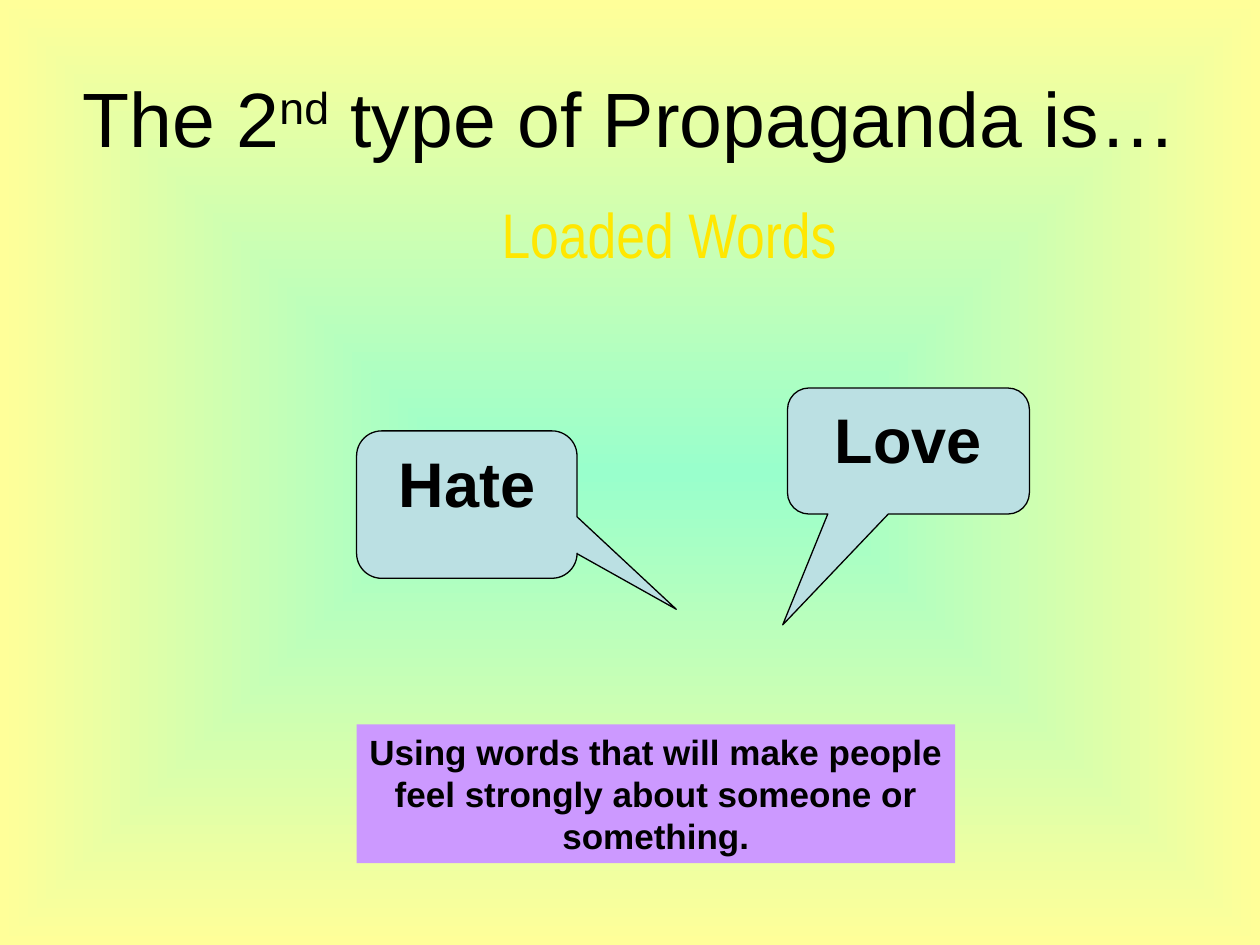
from lxml import etree
from pptx import Presentation
from pptx.dml.color import RGBColor
from pptx.enum.shapes import MSO_SHAPE
from pptx.enum.text import MSO_ANCHOR, PP_ALIGN
from pptx.oxml.ns import qn
from pptx.util import Inches, Pt

CALLOUT = MSO_SHAPE.ROUNDED_RECTANGULAR_CALLOUT
RECT = MSO_SHAPE.RECTANGLE
TOP, MIDDLE = MSO_ANCHOR.TOP, MSO_ANCHOR.MIDDLE
CENTER = PP_ALIGN.CENTER

BLACK = RGBColor(0x00, 0x00, 0x00)
MINT = RGBColor(0x99, 0xFF, 0xCC)
CREAM = RGBColor(0xFF, 0xFF, 0x99)
GOLD = RGBColor(0xFF, 0xE7, 0x01)
BLUE = RGBColor(0xBB, 0xE0, 0xE3)
PURPLE = RGBColor(0xCC, 0x99, 0xFF)


def write(shape, words, size, color=BLACK, face="Arial", bold=False, anchor=TOP):
    """Fill the shape with one centred paragraph and return it."""
    frame = shape.text_frame
    frame.word_wrap = True
    frame.vertical_anchor = anchor
    para = frame.paragraphs[0]
    para.alignment = CENTER
    para.font.size = Pt(size)
    para.font.name = face
    para.font.bold = bold
    para.font.color.rgb = color
    for word in words:
        para.add_run().text = word
    return para


def add_block(kind, box, fill):
    shape = slide.shapes.add_shape(kind, *map(Inches, box))
    shape.shadow.inherit = False
    shape.fill.solid()
    shape.fill.fore_color.rgb = fill
    shape.line.fill.background()
    return shape


prs = Presentation()
prs.slide_width, prs.slide_height = Inches(10), Inches(7.5)
slide = prs.slides.add_slide(prs.slide_layouts[6])

# Background: mint centre fading to cream edges
back = slide.background.fill
back.gradient()
for stop, color, place in zip(back.gradient_stops, (MINT, CREAM), (0, 1)):
    stop.color.rgb = color
    stop.position = place
grad = slide.background._cSld.find(".//" + qn("a:gradFill"))
lin = grad.find(qn("a:lin"))
shade = etree.Element(qn("a:path"))
shade.set("path", "shape")
focus = etree.SubElement(shade, qn("a:fillToRect"))
for side in "ltrb":
    focus.set(side, "50000")
grad.replace(lin, shade)

# Title and term
title = slide.shapes.add_textbox(Inches(0.5), Inches(0.3), Inches(9), Inches(1.25))
para = write(title, ["The 2", "nd", " type of Propaganda is…"], 44, anchor=MIDDLE)
para.runs[1].font._element.set("baseline", "30000")

term = slide.shapes.add_textbox(Inches(2.67), Inches(1.5), Inches(5.28), Inches(1.5))
write(term, ["Loaded Words"], 36, GOLD, "Arial Narrow")

# Speech bubbles
bubbles = [
    ("Love", (6.25, 3.08, 1.92, 1), (-0.52, 1.38, 0.17)),
    ("Hate", (2.83, 3.42, 1.75, 1.17), (0.95, 0.71, 0.17)),
]
for word, box, tail in bubbles:
    bubble = add_block(CALLOUT, box, BLUE)
    bubble.line.color.rgb = BLACK
    bubble.line.width = Pt(0.75)
    for i, value in enumerate(tail):
        bubble.adjustments[i] = value
    write(bubble, [word], 36, bold=True)

# Definition
meaning = add_block(RECT, (2.83, 5.75, 4.75, 1.1), PURPLE)
write(
    meaning,
    ["Using words that will make people feel strongly about someone or something."],
    20,
    bold=True,
)

prs.save("out.pptx")
